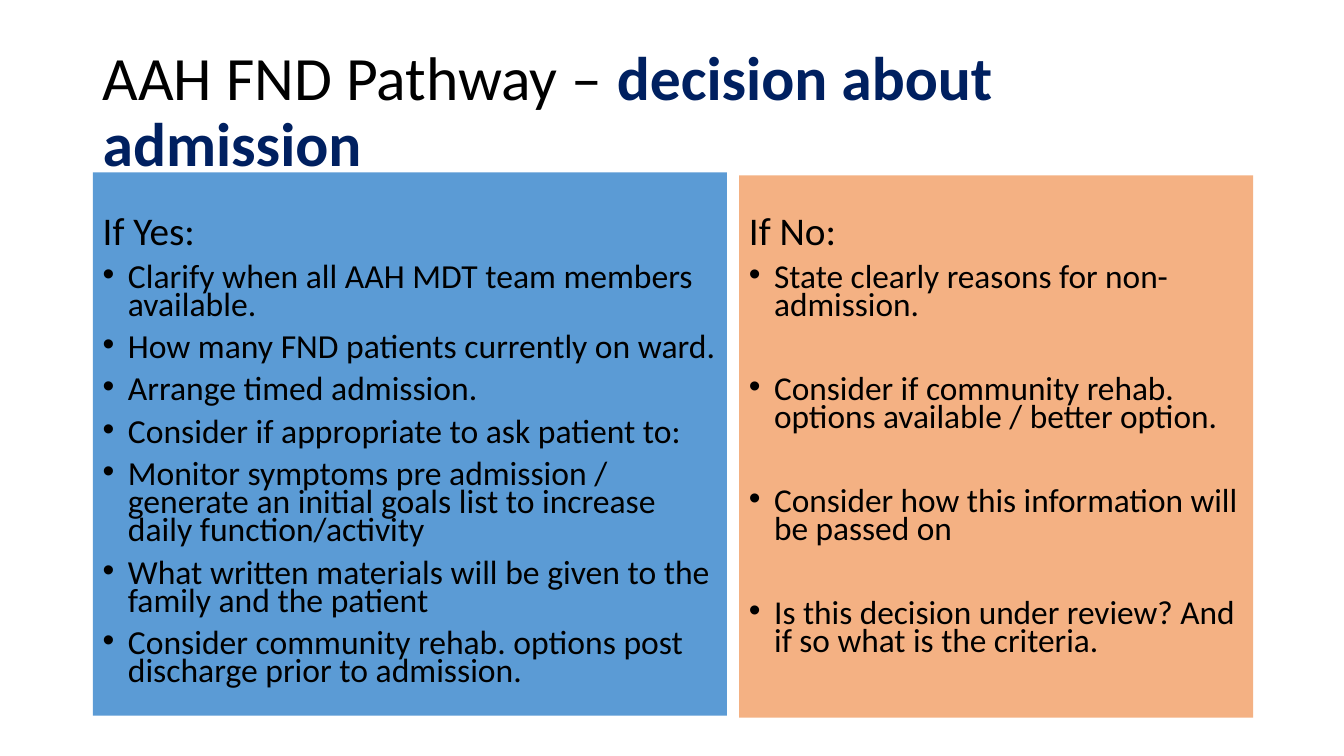
from lxml import etree
from pptx import Presentation
from pptx.dml.color import RGBColor
from pptx.enum.shapes import MSO_SHAPE
from pptx.enum.text import MSO_ANCHOR, PP_ALIGN
from pptx.oxml.ns import qn
from pptx.util import Inches, Pt

RECTANGLE = MSO_SHAPE.RECTANGLE
TOP, MIDDLE = MSO_ANCHOR.TOP, MSO_ANCHOR.MIDDLE
LEFT = PP_ALIGN.LEFT
BLACK = RGBColor(0x00, 0x00, 0x00)
NAVY = RGBColor(0x00, 0x20, 0x60)
BLUE = RGBColor(0x5B, 0x9B, 0xD5)
ORANGE = RGBColor(0xF4, 0xB1, 0x83)
FONT = "Calibri"
BULLET_INDENT = Inches(0.25)

YES_ACTIONS = [
    "Clarify when all AAH MDT team members available.",
    "How many FND patients currently on ward.",
    "Arrange timed admission.",
    "Consider if appropriate to ask patient to:",
    "Monitor symptoms pre admission / generate an initial goals list to increase daily function/activity",
    "What written materials will be given to the family and the patient",
    "Consider community rehab. options post discharge prior to admission.",
]
NO_ACTIONS = [
    "State clearly reasons for non-admission.",
    "Consider if community rehab. options available / better option.",
    "Consider how this information will be passed on",
    "Is this decision under review? And if so what is the criteria.",
]


def add_text(paragraph, text, size, color=BLACK, bold=False, line_spacing=0.7, space_before=0):
    """Append a formatted run and set the paragraph's spacing."""
    paragraph.alignment = LEFT
    paragraph.line_spacing = line_spacing
    paragraph.space_before = Pt(space_before)
    run = paragraph.add_run()
    run.text = text
    run.font.name = FONT
    run.font.size = Pt(size)
    run.font.bold = bold
    run.font.color.rgb = color


def add_bullet(paragraph):
    """Give the paragraph a round bullet with a hanging indent."""
    properties = paragraph._p.get_or_add_pPr()
    properties.set("marL", str(BULLET_INDENT))
    properties.set("indent", str(-BULLET_INDENT))
    etree.SubElement(properties, qn("a:buFont")).set("typeface", "Arial")
    etree.SubElement(properties, qn("a:buChar")).set("char", "•")


def add_title(slide, left, top, width, height):
    """Place the two-colour slide title in the given box."""
    shape = slide.shapes.add_textbox(Inches(left), Inches(top), Inches(width), Inches(height))
    frame = shape.text_frame
    frame.word_wrap = True
    frame.vertical_anchor = MIDDLE
    paragraph = frame.paragraphs[0]
    add_text(paragraph, "AAH FND Pathway – ", 44, line_spacing=0.9)
    add_text(paragraph, "decision about admission", 44, color=NAVY, bold=True, line_spacing=0.9)


def add_decision_panel(slide, left, top, width, height, fill, heading, actions,
                       size, margin_top, action_gap):
    """Place a filled panel with a heading and its bulleted actions."""
    shape = slide.shapes.add_shape(
        RECTANGLE, Inches(left), Inches(top), Inches(width), Inches(height))
    shape.shadow.inherit = False
    shape.fill.solid()
    shape.fill.fore_color.rgb = fill
    shape.line.fill.background()
    frame = shape.text_frame
    frame.word_wrap = True
    frame.vertical_anchor = TOP
    frame.margin_top = Inches(margin_top)
    add_text(frame.paragraphs[0], heading, 28)
    for index, action in enumerate(actions):
        paragraph = frame.add_paragraph()
        add_text(paragraph, action, size, space_before=action_gap if index else 10)
        add_bullet(paragraph)


def main():
    """Build the admission decision slide and save it."""
    presentation = Presentation()
    presentation.slide_width = Inches(13.33)
    presentation.slide_height = Inches(7.5)
    slide = presentation.slides.add_slide(presentation.slide_layouts[6])
    add_title(slide, 0.92, 0.4, 11.5, 1.45)
    add_decision_panel(slide, 0.92, 1.71, 6.29, 5.39, BLUE, "If Yes:", YES_ACTIONS,
                       size=24, margin_top=0.46, action_gap=10)
    add_decision_panel(slide, 7.33, 1.74, 5.1, 5.38, ORANGE, "If No:", NO_ACTIONS,
                       size=23.8, margin_top=0.43, action_gap=40)
    presentation.save("out.pptx")


if __name__ == "__main__":
    main()
